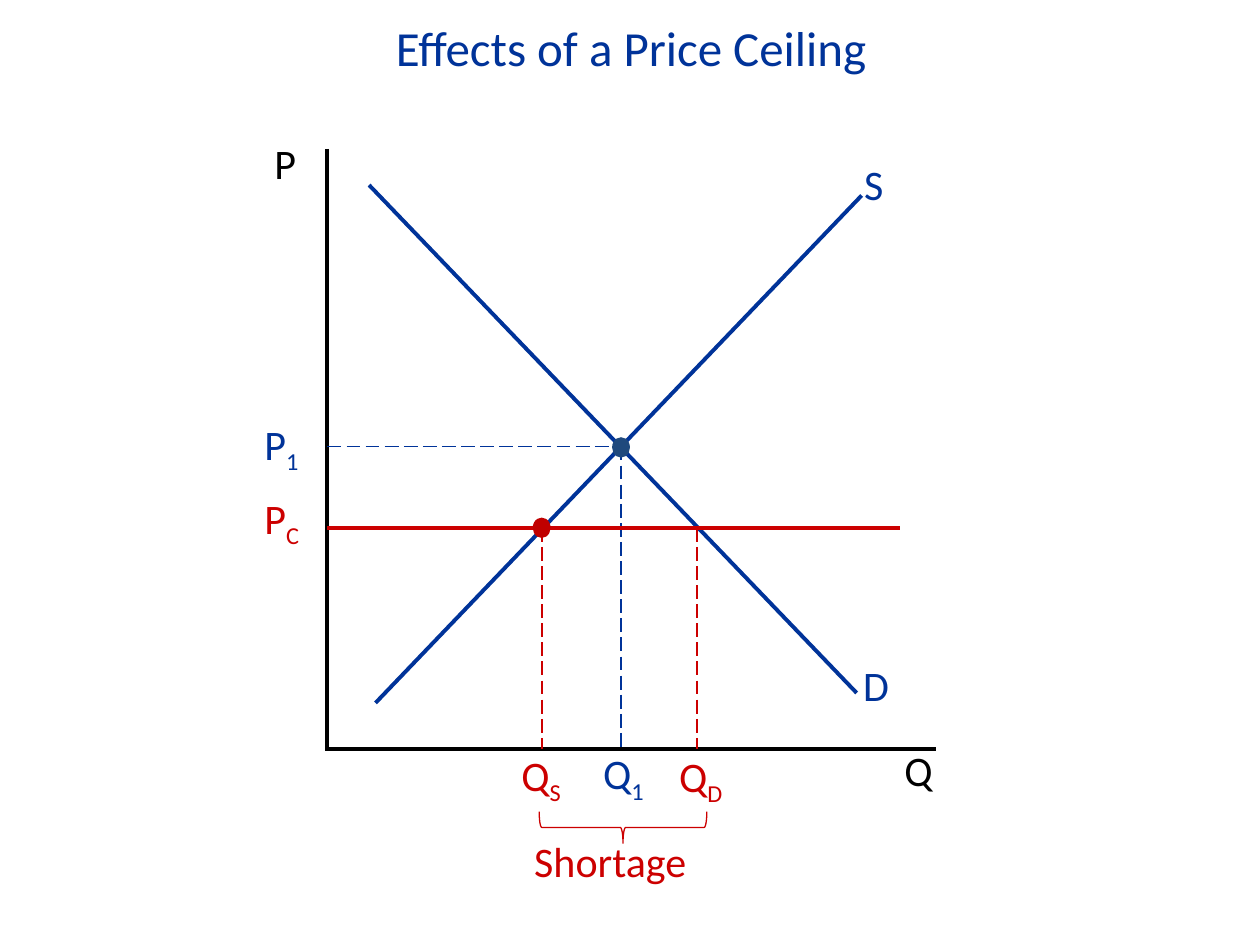
from pptx import Presentation
from pptx.dml.color import RGBColor
from pptx.enum.dml import MSO_LINE
from pptx.enum.shapes import MSO_CONNECTOR, MSO_SHAPE
from pptx.enum.text import MSO_ANCHOR, PP_ALIGN
from pptx.oxml.ns import qn
from pptx.util import Cm, Pt
from lxml import etree

STRAIGHT = MSO_CONNECTOR.STRAIGHT
DASH = MSO_LINE.LONG_DASH
BRACE, OVAL = MSO_SHAPE.LEFT_BRACE, MSO_SHAPE.OVAL
MIDDLE, CENTER = MSO_ANCHOR.MIDDLE, PP_ALIGN.CENTER

BLUE = RGBColor(0x00, 0x33, 0x99)
RED = RGBColor(0xCC, 0x00, 0x00)
BLACK = RGBColor(0x00, 0x00, 0x00)
DOT_RED = RGBColor(0xC0, 0x00, 0x00)
DOT_BLUE = RGBColor(0x1F, 0x49, 0x7D)

# Axes and key points of the graph, in cm
LEFT, BASE = 6.6, 15.09
P_ONE, P_CEIL = 9.0, 10.64
Q_SUP, Q_ONE, Q_DEM = 10.92, 12.52, 14.05


def write(frame, text, sub="", size=24, color=BLACK, align=None, space=None):
    """Fill a text frame with one line and an optional subscript."""
    frame.word_wrap = True
    para = frame.paragraphs[0]
    para.alignment = align
    para.line_spacing = space
    for part in filter(None, (text, sub)):
        run = para.add_run()
        run.text = part
        run.font.name = "Calibri"
        run.font.size = Pt(size)
        run.font.color.rgb = color
    if sub:
        run._r.get_or_add_rPr().set("baseline", "-25000")


def label(slide, text, x, y, width=2.29, height=1.37, **style):
    box = slide.shapes.add_textbox(Cm(x), Cm(y), Cm(width), Cm(height))
    write(box.text_frame, text, **style)


def line(slide, start, end, color, width=2.25, dash=None):
    link = slide.shapes.add_connector(
        STRAIGHT, *(Cm(value) for value in (*start, *end)))
    link.line.color.rgb = color
    link.line.width = Pt(width)
    if dash:
        link.line.dash_style = dash
    etree.SubElement(link._element.spPr, qn("a:effectLst"))


def guide(slide, start, end, color):
    line(slide, start, end, color, width=1, dash=DASH)


def dot(slide, x, y, color, width=0.36, height=0.41):
    mark = slide.shapes.add_shape(
        OVAL, Cm(x - width / 2), Cm(y - height / 2), Cm(width), Cm(height))
    mark.shadow.inherit = False
    mark.fill.solid()
    mark.fill.fore_color.rgb = color
    mark.line.fill.background()


def brace(slide, x, y, width, height, color):
    mark = slide.shapes.add_shape(BRACE, Cm(x), Cm(y), Cm(width), Cm(height))
    mark.rotation = 270
    mark.shadow.inherit = False
    mark.fill.background()
    mark.line.color.rgb = color
    mark.line.width = Pt(0.75)


def head(slide, text):
    title = slide.shapes.title
    title.left, title.top = Cm(1.8), Cm(0.23)
    title.width, title.height = Cm(21.84), Cm(1.45)
    title.text_frame.vertical_anchor = MIDDLE
    write(title.text_frame, text, size=28, color=BLUE, align=CENTER)


def main():
    deck = Presentation()
    deck.slide_width, deck.slide_height = Cm(25.4), Cm(19.05)
    slide = deck.slides.add_slide(deck.slide_layouts[5])
    head(slide, "Effects of a Price Ceiling")

    # Supply and demand curves
    line(slide, (7.57, 14.17), (17.37, 3.94), BLUE)
    line(slide, (7.44, 3.73), (17.27, 13.97), BLUE)
    label(slide, "S", 17.17, 3.07, 1.63, 1.27, color=BLUE)
    label(slide, "D", 17.15, 13.18, 1.8, 1.27, color=BLUE)

    # Axes
    line(slide, (LEFT, 3), (LEFT, 15.14), BLACK)
    line(slide, (LEFT, BASE), (18.87, BASE), BLACK)
    label(slide, "P", 5.28, 2.84, 1.4, space=0.8)
    label(slide, "Q", 17.98, 14.88, 1.55, 1.63)

    # Price ceiling and dashed guides
    guide(slide, (LEFT, P_ONE), (Q_ONE, P_ONE), BLUE)
    guide(slide, (Q_ONE, P_ONE), (Q_ONE, BASE), BLUE)
    line(slide, (LEFT, P_CEIL), (18.14, P_CEIL), RED)
    for x in (Q_SUP, Q_DEM):
        guide(slide, (x, P_CEIL), (x, BASE), RED)

    # Price and quantity labels
    for text, sub, x, y, color in (
            ("P", "1", 5.08, 8.41, BLUE), ("P", "C", 5.08, 9.91, RED),
            ("Q", "S", 10.26, 15.09, RED), ("Q", "1", 11.91, 15.06, BLUE),
            ("Q", "D", 13.44, 15.11, RED)):
        label(slide, text, x, y, sub=sub, color=color, space=0.8)

    # Shortage
    brace(slide, 12.24, 14.99, 0.64, 3.38, RED)
    label(slide, "Shortage", 10.52, 16.92, 4.34, color=RED, space=0.8)

    # Points on the curves
    dot(slide, Q_SUP, P_CEIL, DOT_RED)
    dot(slide, Q_ONE, P_ONE + 0.02, DOT_BLUE)

    deck.save("out.pptx")


if __name__ == "__main__":
    main()
